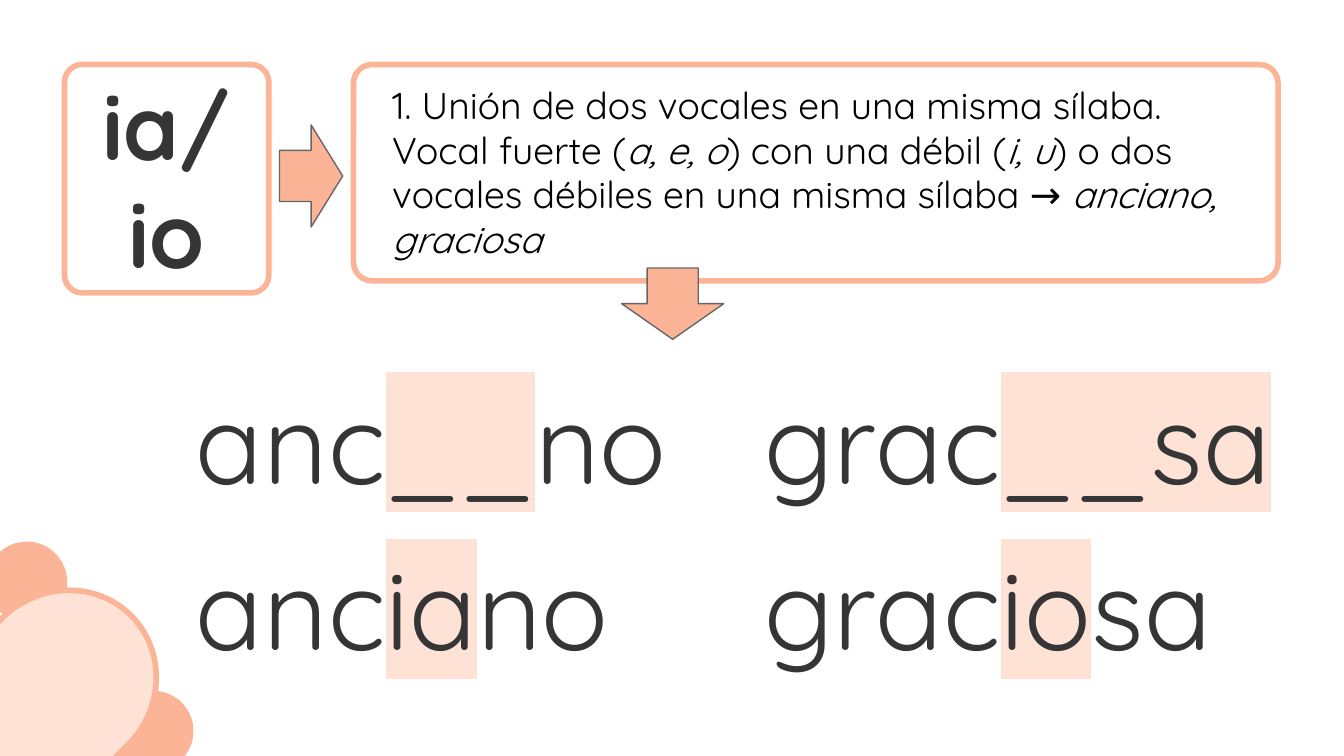
import dataclasses
import typing

import lxml.etree
import pptx
import pptx.dml.color
import pptx.enum.shapes
import pptx.enum.text
import pptx.oxml.ns
import pptx.util

KIND = pptx.enum.shapes.MSO_SHAPE
ALIGN = pptx.enum.text.PP_ALIGN
ANCHOR = pptx.enum.text.MSO_ANCHOR
COLORS = {"peach": "FCB497", "pale": "FFE2D6", "ink": "363535",
          "black": "000000", "gray": "666666"}
FONT = "Quicksand"

# The slide is a grid of 100 columns with square cells
WIDE, HIGH = pptx.util.Inches(10), pptx.util.Inches(5.625)
CELL = WIDE // 100


@dataclasses.dataclass
class Box:
    col: float
    row: float
    cols: float
    rows: float

    def place(self) -> list[int]:
        return [round(n * CELL) for n in (self.col, self.row, self.cols, self.rows)]


@dataclasses.dataclass
class Form:
    kind: typing.Any
    box: Box
    fill: str | None = None
    line: str | None = None
    width: float = 3
    turn: float = 0
    round: float | None = None


@dataclasses.dataclass
class Part:
    text: str
    italic: bool = False
    mark: str | None = None


def tint(name: str) -> pptx.dml.color.RGBColor:
    return pptx.dml.color.RGBColor.from_string(COLORS[name])


def draw(shapes: typing.Any, form: Form) -> typing.Any:
    shape = shapes.add_shape(form.kind, *form.box.place())
    shape.shadow.inherit = False
    shape.rotation = form.turn
    if form.round is not None:
        shape.adjustments[0] = form.round
    if form.fill:
        shape.fill.solid()
        shape.fill.fore_color.rgb = tint(form.fill)
    else:
        shape.fill.background()
    if form.line:
        shape.line.color.rgb = tint(form.line)
        shape.line.width = pptx.util.Pt(form.width)
    else:
        shape.line.fill.background()
    return shape


def shade(run: typing.Any, name: str) -> None:
    """Put a highlight right after the run's text colour."""
    mark = lxml.etree.Element(pptx.oxml.ns.qn("a:highlight"))
    lxml.etree.SubElement(mark, pptx.oxml.ns.qn("a:srgbClr"), val=COLORS[name])
    run.font.fill._xPr.find(pptx.oxml.ns.qn("a:solidFill")).addnext(mark)


def write(shape: typing.Any, lines: list[list[Part]], size: float, color: str,
          bold: bool = False, align: typing.Any = ALIGN.LEFT,
          anchor: typing.Any = ANCHOR.TOP) -> None:
    frame = shape.text_frame
    edge = pptx.util.Inches(0.1)
    form = {"word_wrap": True, "vertical_anchor": anchor, "margin_left": edge,
            "margin_right": edge, "margin_top": edge, "margin_bottom": edge}
    for key, value in form.items():
        setattr(frame, key, value)
    for at, line in enumerate(lines):
        para = frame.add_paragraph() if at else frame.paragraphs[0]
        para.alignment = align
        for part in line:
            run = para.add_run()
            run.text = part.text
            style = {"name": FONT, "size": pptx.util.Pt(size),
                     "bold": bold, "italic": part.italic}
            for key, value in style.items():
                setattr(run.font, key, value)
            run.font.color.rgb = tint(color)
            if part.mark:
                shade(run, part.mark)


# Corner flower, from back to front
FLOWER = [
    Form(KIND.OVAL, Box(-1, 40.3, 6, 6), "peach"),
    Form(KIND.OVAL, Box(8.4, 51.4, 6, 6), "peach"),
    Form(KIND.FLOWCHART_DELAY, Box(-2.2, 44.1, 14, 13.3), "pale", "peach", turn=315),
    Form(KIND.RECTANGLE, Box(-6.8, 52.3, 12.7, 7.5), "pale", turn=45),
]
RULE = Form(KIND.ROUNDED_RECTANGLE, Box(26.3, 4.8, 68.8, 16.1), None, "peach", round=0.087)
VOWELS = Form(KIND.ROUNDED_RECTANGLE, Box(4.8, 4.8, 15.2, 17), None, "peach", round=0.087)
ARROWS = [
    Form(KIND.RIGHT_ARROW, Box(20.8, 9.3, 4.7, 7.6), "peach", "gray", 0.75),
    Form(KIND.RIGHT_ARROW, Box(47.4, 18.8, 5.3, 7.6), "peach", "gray", 0.75, 90),
]
RULE_TEXT = [
    Part("1. Unión de dos vocales en una misma sílaba. Vocal fuerte ("),
    Part("a, e, o", True),
    Part(") con una débil ("),
    Part("i, u", True),
    Part(") o dos vocales débiles en una misma sílaba → "),
    Part("anciano, graciosa", True),
]

# Each word: left column, then width and parts of the gapped and full forms
TOP, STEP, TALL = 26.7, 12.4, 12.3
WORDS = [
    (13.6, [(38.3, [Part("anc"), Part("__", mark="pale"), Part("no")]),
            (38.3, [Part("anc"), Part("ia", mark="pale"), Part("no")])]),
    (55.9, [(41.6, [Part("grac"), Part("__sa", mark="pale")]),
            (37.4, [Part("grac"), Part("io", mark="pale"), Part("sa")])]),
]


def main() -> None:
    deck = pptx.Presentation()
    deck.slide_width, deck.slide_height = WIDE, HIGH
    shapes = deck.slides.add_slide(deck.slide_layouts[6]).shapes

    for form in FLOWER:
        draw(shapes, form)

    # Vowel pair and its rule
    draw(shapes, RULE)
    write(draw(shapes, VOWELS), [[Part("ia/")], [Part("io")]], 48, "ink",
          True, ALIGN.CENTER, ANCHOR.MIDDLE)
    note = shapes.add_textbox(*Box(28.2, 5.1, 65.2, 15.5).place())
    write(note, [RULE_TEXT], 20, "black")
    for form in ARROWS:
        draw(shapes, form)

    # Example words, one group per column
    for col, forms in WORDS:
        group = shapes.add_group_shape()
        for at, (cols, parts) in enumerate(forms):
            box = Box(col, TOP + at * STEP, cols, TALL)
            write(group.shapes.add_textbox(*box.place()), [parts], 60, "ink")

    deck.save("out.pptx")


if __name__ == "__main__":
    main()
